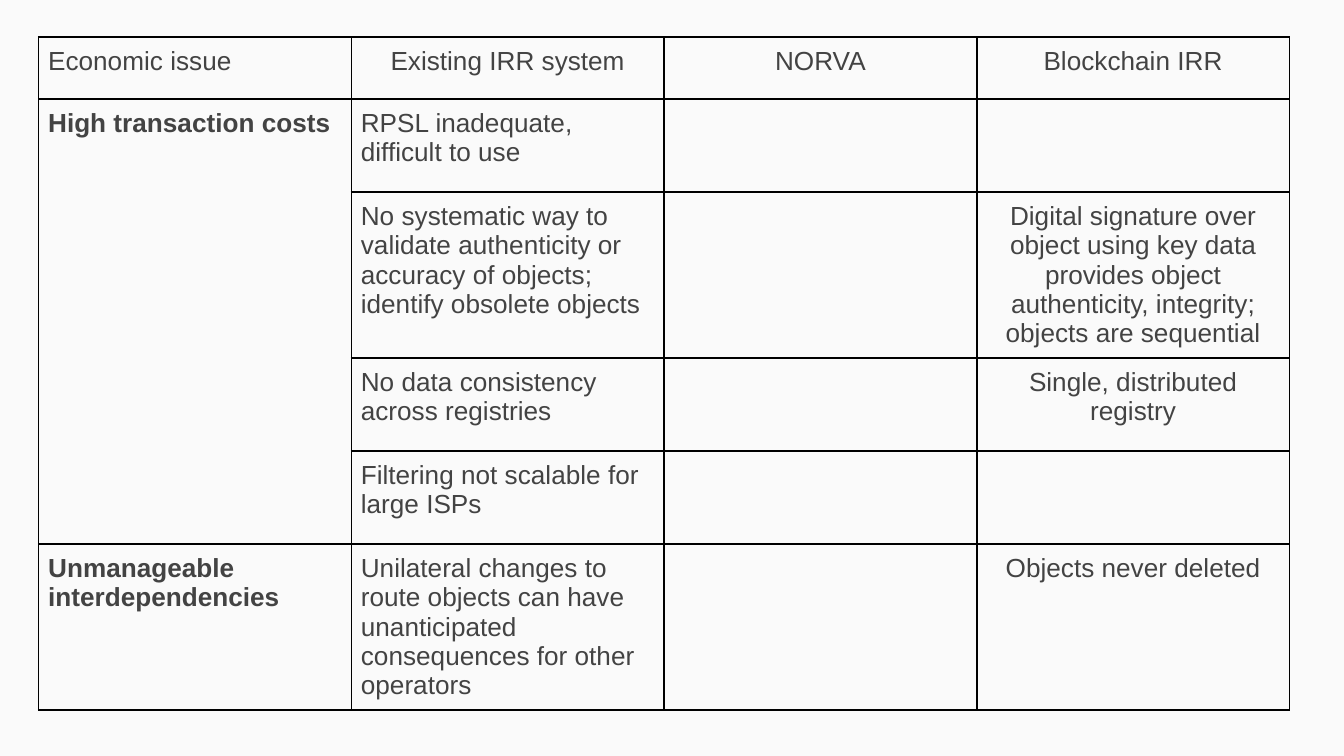
import pptx
import pptx.util
import pptx.dml.color
import pptx.enum.text
import pptx.oxml
import pptx.oxml.ns
from pptx.util import Cm

BACKGROUND = pptx.dml.color.RGBColor(0xFA, 0xFA, 0xFA)
TEXT = pptx.dml.color.RGBColor(0x43, 0x43, 0x43)
BORDER = pptx.dml.color.RGBColor(0x00, 0x00, 0x00)

COLUMN_WIDTH = Cm(5.91)
ROW_HEIGHTS = [Cm(h) for h in (1.17, 1.76, 2.64, 1.76, 1.76, 1.76)]
CELL_MARGIN = Cm(0.18)

HEADINGS = ("Economic issue", "Existing IRR system", "NORVA", "Blockchain IRR")
# Each issue holds rows of (existing IRR system, NORVA, blockchain IRR).
ISSUES = {
    "High transaction costs": [
        ("RPSL inadequate, difficult to use", "", ""),
        ("No systematic way to validate authenticity or accuracy of objects; "
         "identify obsolete objects", "",
         "Digital signature over object using key data provides object "
         "authenticity, integrity; objects are sequential"),
        ("No data consistency across registries", "",
         "Single, distributed registry"),
        ("Filtering not scalable for large ISPs", "", ""),
    ],
    "Unmanageable interdependencies": [
        ("Unilateral changes to route objects can have unanticipated "
         "consequences for other operators", "", "Objects never deleted"),
    ],
}


def write_text(cell, text, bold=False, centred=False):
    """Put formatted text in a cell; an empty text leaves it blank."""
    if not text:
        return
    paragraph = cell.text_frame.paragraphs[0]
    align = pptx.enum.text.PP_ALIGN
    paragraph.alignment = align.CENTER if centred else align.LEFT
    run = paragraph.add_run()
    run.text = text
    run.font.name = "Arial"
    run.font.size = pptx.util.Pt(14)
    run.font.bold = bold
    run.font.color.rgb = TEXT


def style_cell(cell):
    """Give a cell its margins, clear fill and four thin borders."""
    cell.margin_left = cell.margin_right = CELL_MARGIN
    cell.margin_top = cell.margin_bottom = CELL_MARGIN
    cell.fill.background()
    properties = cell._tc.get_or_add_tcPr()
    for position, side in enumerate(("lnL", "lnR", "lnT", "lnB")):
        properties.insert(position, pptx.oxml.parse_xml(
            f'<a:{side} {pptx.oxml.ns.nsdecls("a")} w="{pptx.util.Pt(1)}">'
            f'<a:solidFill><a:srgbClr val="{BORDER}"/></a:solidFill>'
            f'</a:{side}>'))


def add_grid(slide):
    """Add the bordered, unfilled table and return it."""
    columns = len(HEADINGS)
    grid = slide.shapes.add_table(
        len(ROW_HEIGHTS), columns, Cm(0.73), Cm(0.7),
        COLUMN_WIDTH * columns, sum(ROW_HEIGHTS)).table
    grid.first_row = grid.horz_banding = False
    for column in grid.columns:
        column.width = COLUMN_WIDTH
    for row, height in zip(grid.rows, ROW_HEIGHTS):
        row.height = height
    for cell in grid.iter_cells():
        style_cell(cell)
    return grid


def fill_grid(grid):
    """Write the headings, then each issue beside its rows."""
    for column, heading in enumerate(HEADINGS):
        write_text(grid.cell(0, column), heading, centred=column > 0)
    row = 1
    for issue, findings in ISSUES.items():
        issue_cell = grid.cell(row, 0)
        write_text(issue_cell, issue, bold=True)
        if len(findings) > 1:
            issue_cell.merge(grid.cell(row + len(findings) - 1, 0))
        for finding in findings:
            for column, text in enumerate(finding, start=1):
                write_text(grid.cell(row, column), text, centred=column > 1)
            row += 1


def main():
    """Build the slide and save it."""
    deck = pptx.Presentation()
    deck.slide_width, deck.slide_height = Cm(25.4), Cm(14.29)
    slide = deck.slides.add_slide(deck.slide_layouts[6])
    slide.background.fill.solid()
    slide.background.fill.fore_color.rgb = BACKGROUND
    fill_grid(add_grid(slide))
    deck.save("out.pptx")


main()
